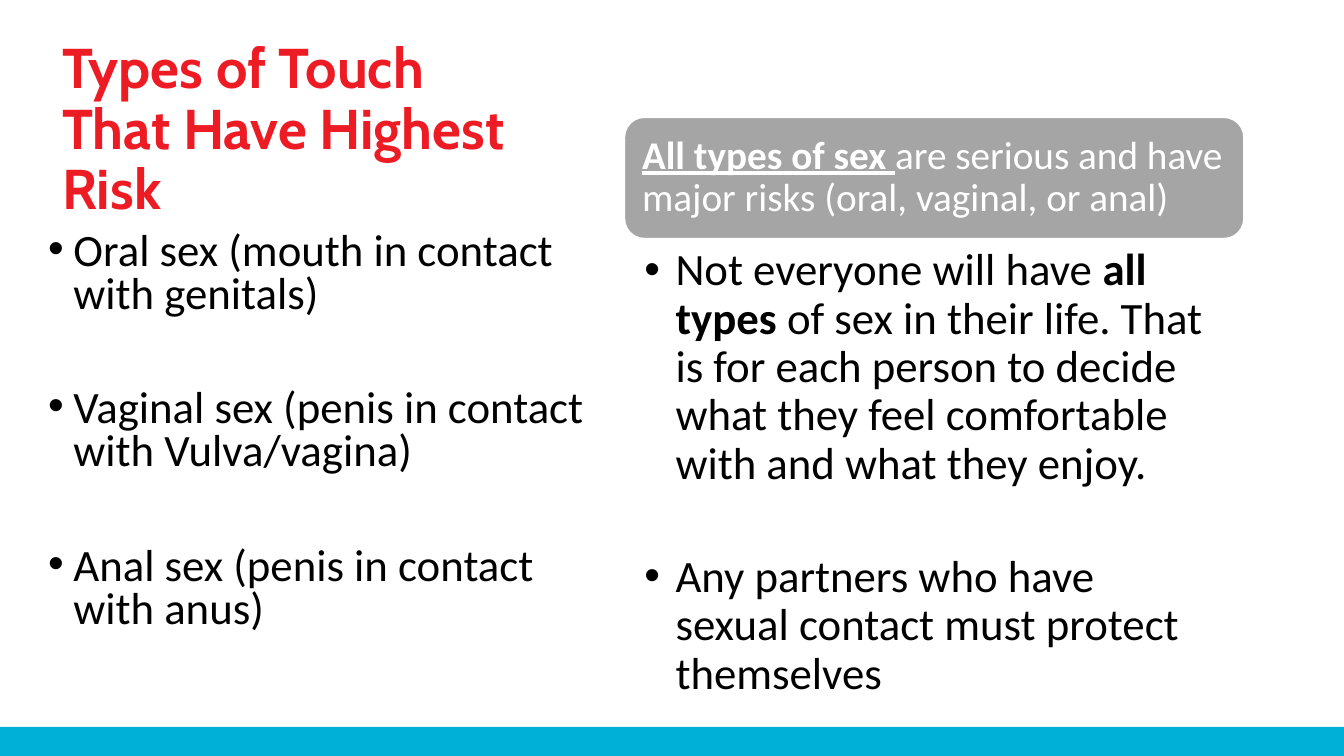
import dataclasses

import lxml.etree
import pptx
import pptx.dml.color
import pptx.enum.shapes
import pptx.enum.text
import pptx.oxml.ns
import pptx.util

SHAPE = pptx.enum.shapes.MSO_SHAPE
ANCHOR = pptx.enum.text.MSO_ANCHOR


@dataclasses.dataclass(frozen=True)
class Theme:
    red: str = "ED1C24"
    cyan: str = "00B0D7"
    gray: str = "A5A5A5"
    white: str = "FFFFFF"
    black: str = "000000"
    heading_font: str = "Cabin"
    body_font: str = "Calibri"
    title_size: int = 40
    body_size: int = 32
    callout_size: int = 28


class Deck:
    columns = 100
    rows = 100

    def __init__(self, theme):
        self.theme = theme
        self.prs = pptx.Presentation()
        self.prs.slide_width = pptx.util.Inches(13.33)
        self.prs.slide_height = pptx.util.Inches(7.5)
        self.s = self.prs.slides.add_slide(self.prs.slide_layouts[6])

    def place(self, x, y, w, h):
        col = self.prs.slide_width / self.columns
        row = self.prs.slide_height / self.rows
        return [round(v) for v in (x * col, y * row, w * col, h * row)]

    def shape(self, kind, cell, fill, line=None):
        sp = self.s.shapes.add_shape(kind, *self.place(*cell))
        sp.shadow.inherit = False
        sp.fill.solid()
        sp.fill.fore_color.rgb = pptx.dml.color.RGBColor.from_string(fill)
        if line:
            sp.line.color.rgb = pptx.dml.color.RGBColor.from_string(line)
            sp.line.width = pptx.util.Pt(1.5)
        else:
            sp.line.fill.background()
        return sp

    def box(self, cell):
        return self.s.shapes.add_textbox(*self.place(*cell))

    def text(self, sp, paragraphs, size, color, font=None, spacing=0.9, after=0,
             indent=0, anchor=ANCHOR.TOP, insets=(0.1, 0.05, 0.1, 0.05)):
        tf = sp.text_frame
        tf.word_wrap = True
        tf.vertical_anchor = anchor
        tf.margin_left, tf.margin_top, tf.margin_right, tf.margin_bottom = map(
            pptx.util.Inches, insets)
        for i, runs in enumerate(paragraphs):
            p = tf.add_paragraph() if i else tf.paragraphs[0]
            p.alignment = pptx.enum.text.PP_ALIGN.LEFT
            p.line_spacing = spacing
            p.space_after = pptx.util.Pt(after)
            if indent:
                self.bullet(p, indent)
            for words, bold, underline in runs:
                r = p.add_run()
                r.text = words
                r.font.name = font or self.theme.body_font
                r.font.size = pptx.util.Pt(size)
                r.font.bold = bold
                r.font.underline = underline
                r.font.color.rgb = pptx.dml.color.RGBColor.from_string(color)

    def bullet(self, p, indent):
        pPr = p._p.get_or_add_pPr()
        pPr.set("marL", str(pptx.util.Inches(indent)))
        pPr.set("indent", str(-pptx.util.Inches(indent)))
        qn = pptx.oxml.ns.qn
        lxml.etree.SubElement(pPr, qn("a:buFont"), typeface="Arial")
        lxml.etree.SubElement(pPr, qn("a:buChar"), char="•")

    def save(self):
        self.prs.save("out.pptx")


def main():
    theme = Theme()
    deck = Deck(theme)
    deck.shape(SHAPE.RECTANGLE, (0, 96.13, 100, 3.87), theme.cyan)

    title = deck.box((3.9, 5.07, 37.06, 24.93))
    deck.text(title, [[("Types of Touch That Have Highest Risk", True, False)]],
              theme.title_size, theme.red, font=theme.heading_font,
              anchor=ANCHOR.BOTTOM)

    types = ["Oral sex (mouth in contact with genitals)",
             "Vaginal sex (penis in contact with Vulva/vagina)",
             "Anal sex (penis in contact with anus)"]
    deck.text(deck.box((2.85, 30, 43.66, 64.93)),
              [[(words, False, False)] for words in types],
              theme.body_size, theme.black, spacing=0.8, after=51, indent=0.25)

    callout = deck.shape(SHAPE.ROUNDED_RECTANGLE, (46.44, 15.47, 46.14, 16.13),
                         theme.gray, line=theme.white)
    deck.text(callout,
              [[("All types of sex ", True, True),
                ("are serious and have major risks (oral, vaginal, or anal)",
                 False, False)]],
              theme.callout_size, theme.white, anchor=ANCHOR.MIDDLE,
              insets=(0.12, 0.12, 0.12, 0.12))

    deck.text(deck.box((46.44, 31.87, 46.14, 63.07)),
              [[("Not everyone will have ", False, False),
                ("all types ", True, False),
                ("of sex in their life. That is for each person to decide what "
                 "they feel comfortable with and what they enjoy.", False, False)],
               [("Any partners who have sexual contact must protect themselves",
                 False, False)]],
              theme.body_size, theme.black, after=46, indent=0.31,
              insets=(0.2, 0.06, 0.32, 0.06))
    deck.save()


if __name__ == "__main__":
    main()
